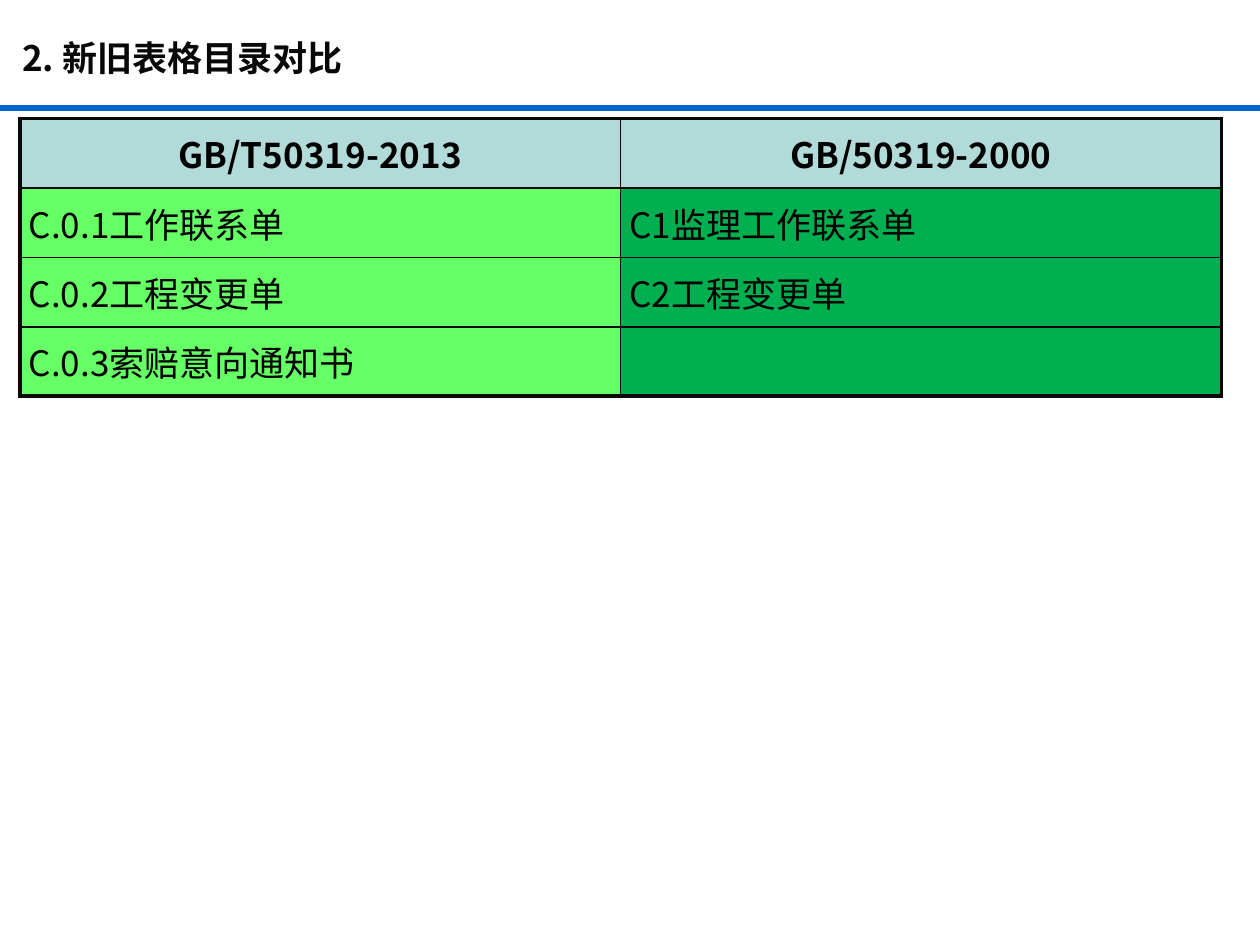
from lxml.etree import SubElement
from pptx import Presentation
from pptx.dml.color import RGBColor
from pptx.enum.shapes import MSO_CONNECTOR
from pptx.enum.text import MSO_ANCHOR, PP_ALIGN
from pptx.oxml.ns import qn
from pptx.util import Cm, Pt

TITLE = "2. 新旧表格目录对比"
ROWS = [
    ("GB/T50319-2013", "GB/50319-2000"),
    ("C.0.1工作联系单", "C1监理工作联系单"),
    ("C.0.2工程变更单", "C2工程变更单"),
    ("C.0.3索赔意向通知书", ""),
]
HEADER_FILL = "B2DAD9"
COLUMN_FILLS = ("66FF66", "00B050")
COLUMN_ALIGNS = (PP_ALIGN.JUSTIFY, PP_ALIGN.LEFT)
INK = "080808"
FONT = "Noto Sans CJK SC"
COLUMN_WIDTH, ROW_HEIGHT = Cm(12.11), Cm(1.4)
THICK, THIN = Pt(2.25), Pt(1)


def color(value):
    return RGBColor.from_string(value)


def style(paragraph, ink, bold):
    font = paragraph.font
    font.size, font.bold, font.name = Pt(20), bold, FONT
    font.color.rgb = color(ink)
    properties = paragraph._p.pPr.find(qn("a:defRPr"))
    SubElement(properties, qn("a:ea"), typeface=FONT)


def add_border(cell, side, width):
    line = SubElement(cell._tc.get_or_add_tcPr(), qn(f"a:ln{side}"), w=str(width))
    fill = SubElement(line, qn("a:solidFill"))
    SubElement(fill, qn("a:srgbClr"), val=INK)


def add_title(slide):
    box = slide.shapes.add_textbox(Cm(0.2), Cm(0.33), Cm(22), Cm(1.8))
    frame = box.text_frame
    frame.word_wrap = True
    frame.vertical_anchor = MSO_ANCHOR.MIDDLE
    paragraph = frame.paragraphs[0]
    paragraph.text = TITLE
    paragraph.line_spacing = 0.85
    style(paragraph, INK, True)


def add_rule(slide, width):
    rule = slide.shapes.add_connector(MSO_CONNECTOR.STRAIGHT, 0, Cm(2.18), width, Cm(2.18))
    rule.line.color.rgb = color("0066CC")
    rule.line.width = Pt(3.5)
    SubElement(rule._element.spPr, qn("a:effectLst"))


def add_comparison(slide):
    row_count, column_count = len(ROWS), len(ROWS[0])
    table = slide.shapes.add_table(
        row_count, column_count, Cm(0.4), Cm(2.39),
        COLUMN_WIDTH * column_count, ROW_HEIGHT * row_count).table
    for column in table.columns:
        column.width = COLUMN_WIDTH
    for r, texts in enumerate(ROWS):
        table.rows[r].height = ROW_HEIGHT
        for c, text in enumerate(texts):
            cell = table.cell(r, c)
            header = r == 0
            outer = {"L": c == 0, "R": c == column_count - 1,
                     "T": header, "B": r == row_count - 1}
            for side, is_outer in outer.items():
                add_border(cell, side, THICK if is_outer else THIN)
            cell.fill.solid()
            cell.fill.fore_color.rgb = color(HEADER_FILL if header else COLUMN_FILLS[c])
            cell.vertical_anchor = MSO_ANCHOR.MIDDLE
            cell.margin_left = cell.margin_right = Cm(0.18)
            cell.margin_top = cell.margin_bottom = 0
            paragraph = cell.text_frame.paragraphs[0]
            paragraph.text = text
            paragraph.alignment = PP_ALIGN.CENTER if header else COLUMN_ALIGNS[c]
            style(paragraph, "000000", header)


def main():
    presentation = Presentation()
    presentation.slide_width, presentation.slide_height = Cm(25.4), Cm(19.05)
    slide = presentation.slides.add_slide(presentation.slide_layouts[6])
    add_rule(slide, presentation.slide_width)
    add_title(slide)
    add_comparison(slide)
    presentation.save("out.pptx")


if __name__ == "__main__":
    main()
